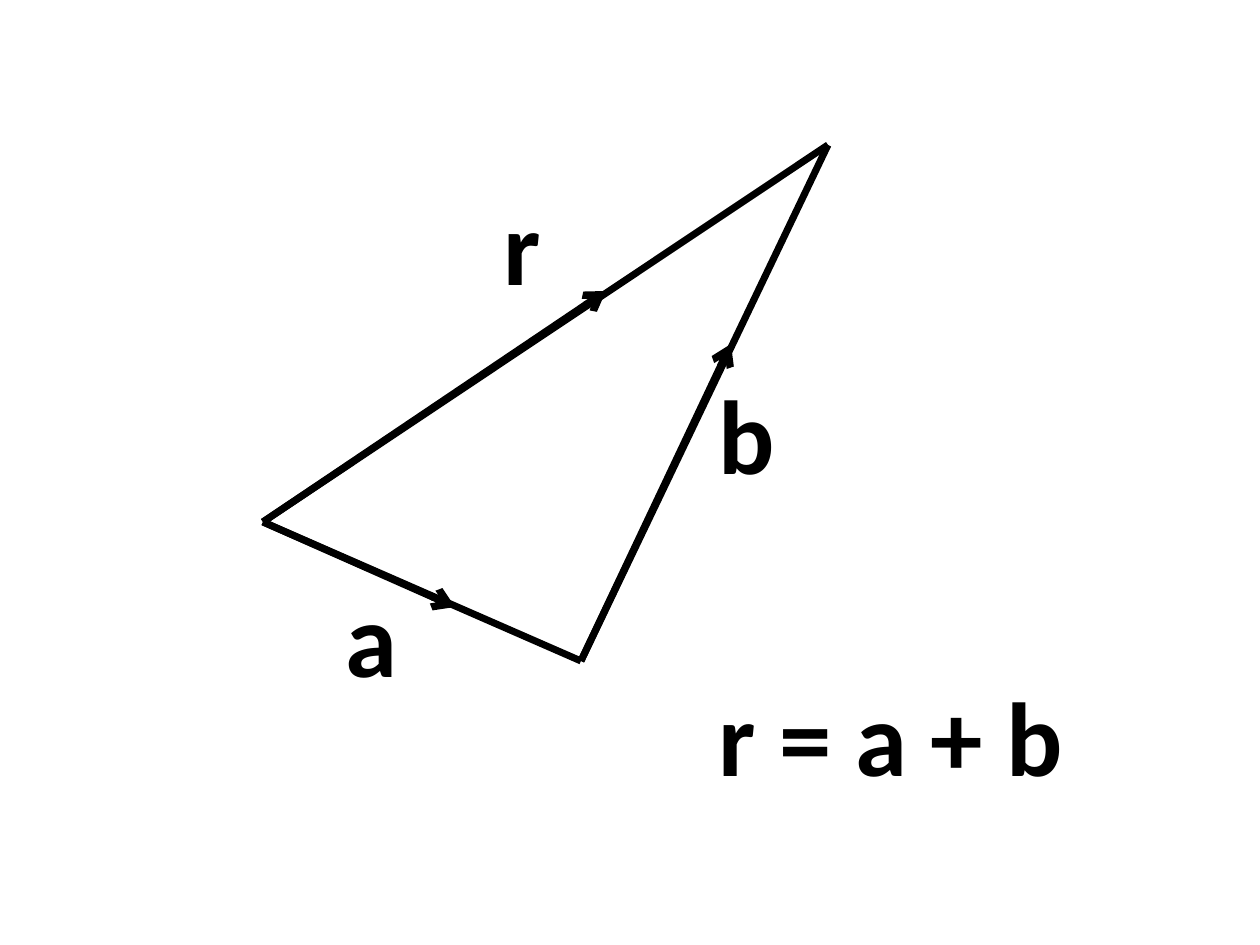
from lxml.etree import SubElement
from pptx import Presentation
from pptx.dml.color import RGBColor
from pptx.enum.shapes import MSO_CONNECTOR
from pptx.enum.text import MSO_AUTO_SIZE
from pptx.oxml.ns import qn
from pptx.util import Emu, Pt

PX = 914400 // 126
COLORS = {"ink": "000000"}
FONT = "Calibri"


def px(n):
    return Emu(n * PX)


def add_line(s, start, end, arrow=False):
    c = s.shapes.add_connector(MSO_CONNECTOR.STRAIGHT, *map(px, start + end))
    c.line.width = Pt(4)
    c.line.color.rgb = RGBColor.from_string(COLORS["ink"])
    if arrow:
        SubElement(c.line._get_or_add_ln(), qn("a:tailEnd"), type="arrow")
    SubElement(c._element.spPr, qn("a:effectLst"))


def add_label(s, text, x, y, w, h):
    tf = s.shapes.add_textbox(px(x), px(y), px(w), px(h)).text_frame
    tf.word_wrap = True
    tf.auto_size = MSO_AUTO_SIZE.SHAPE_TO_FIT_TEXT
    r = tf.paragraphs[0].add_run()
    r.text = text
    r.font.name = FONT
    r.font.size = Pt(60)
    r.font.bold = True
    r.font.color.rgb = RGBColor.from_string(COLORS["ink"])


def add_triangle(s, x, y, w, h):
    origin = (x, y + 377)
    corner = (x + 318, y + h)
    apex = (x + w, y)
    vectors = [
        ("r", origin, apex, (343, 146), (228, 29)),
        ("a", origin, corner, (192, 462), (70, 421)),
        ("b", corner, apex, (468, 199), (443, 218)),
    ]
    for name, start, end, (ax, ay), (lx, ly) in vectors:
        add_line(s, start, (x + ax, y + ay), arrow=True)
        add_line(s, start, end)
        add_label(s, name, x + lx, y + ly, 89, 140)


def main():
    prs = Presentation()
    prs.slide_width, prs.slide_height = px(1260), px(945)
    s = prs.slides.add_slide(prs.slide_layouts[6])
    add_triangle(s, 263, 145, 565, 516)
    add_label(s, "r = a + b", 706, 665, 714, 140)
    prs.save("out.pptx")


if __name__ == "__main__":
    main()
